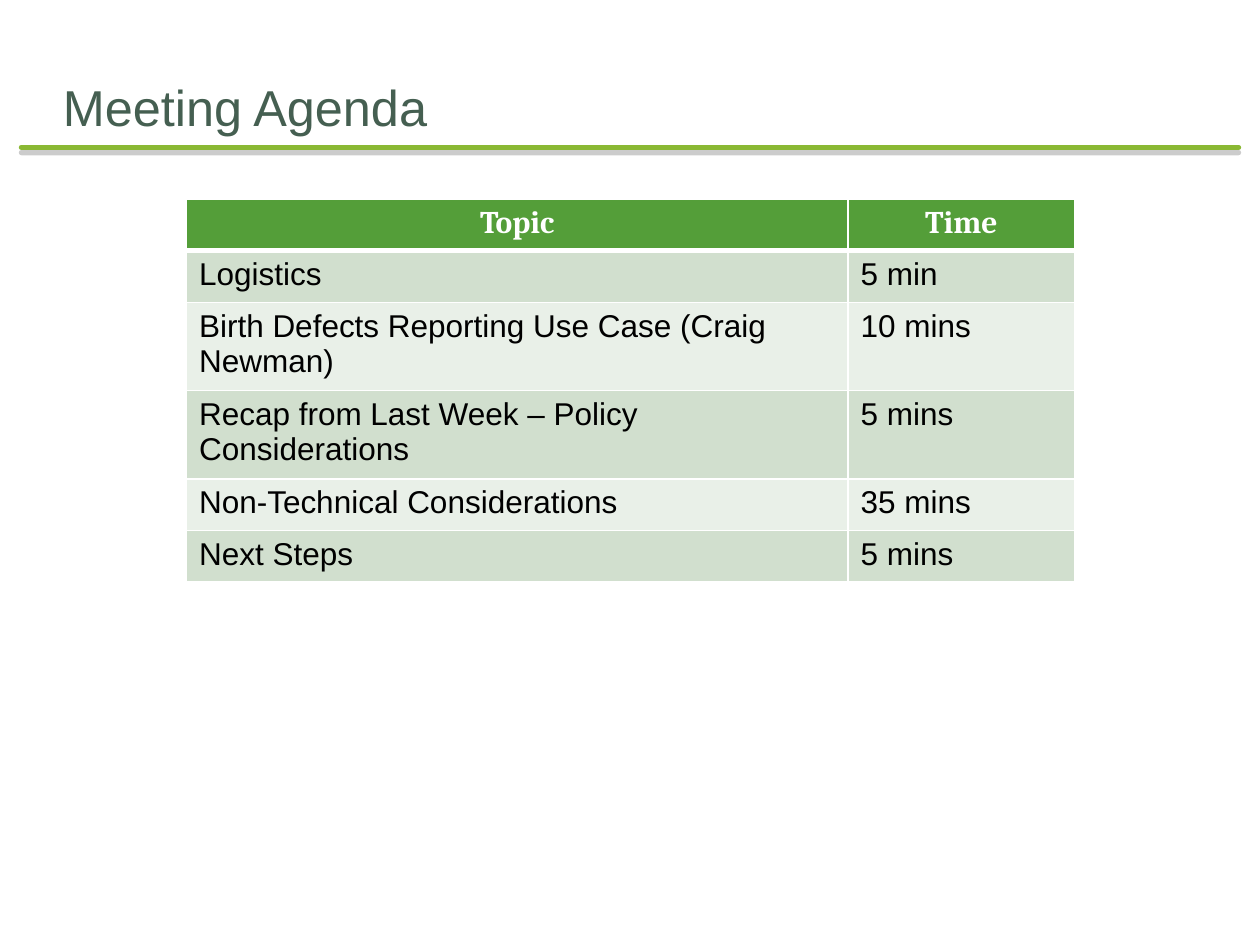
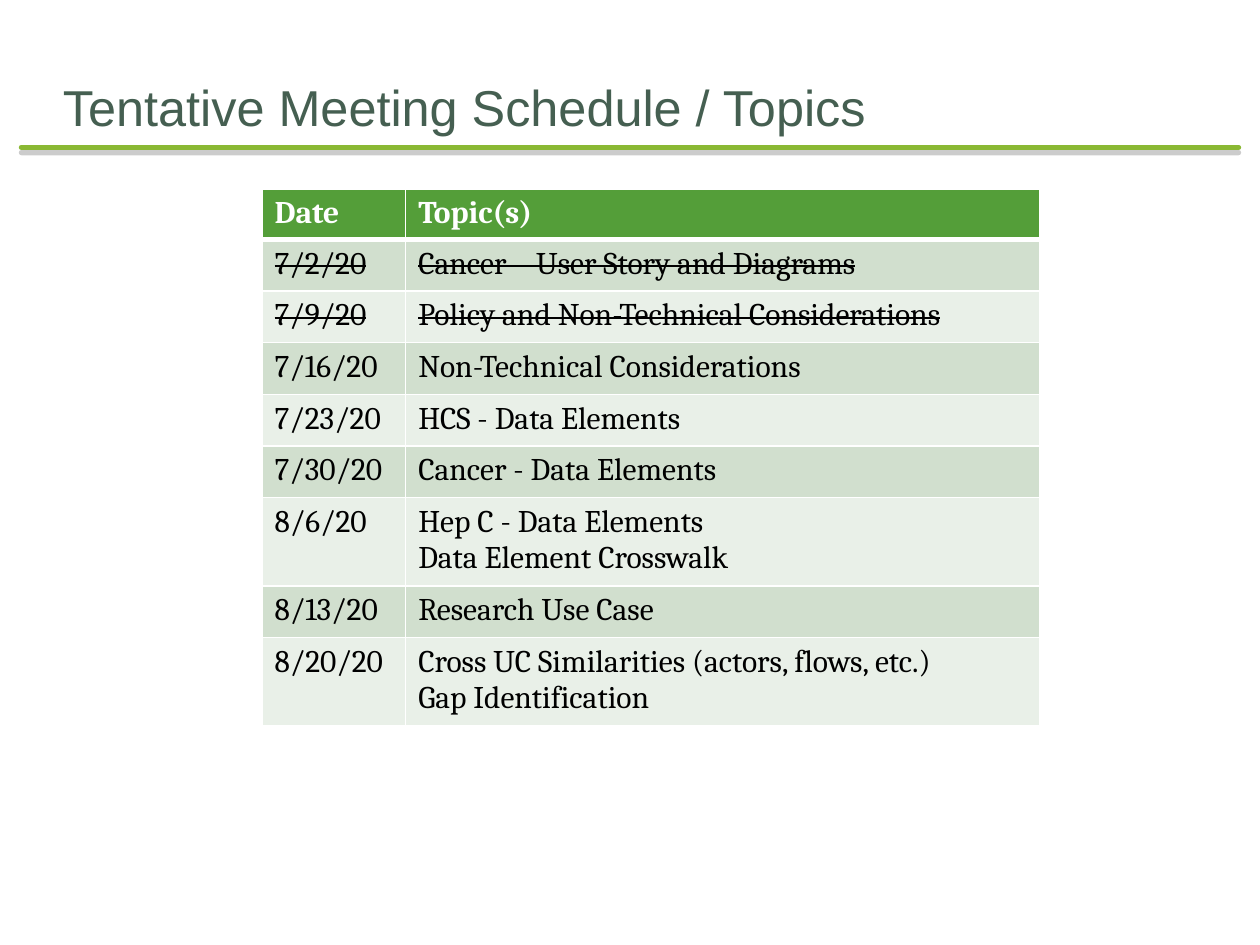
from lxml import etree
from pptx import Presentation
from pptx import util as u
from pptx.dml.color import RGBColor
from pptx.enum import shapes, text
from pptx.oxml import ns

TITLE_COLOR = RGBColor(0x45, 0x5F, 0x51)
RULE_COLOR = RGBColor(0x8A, 0xB8, 0x33)
SHADOW_COLOR = RGBColor(0x80, 0x80, 0x80)
HEADER_FILL = RGBColor(0x54, 0x9E, 0x39)
BAND_FILLS = (RGBColor(0xD1, 0xDF, 0xCE), RGBColor(0xE9, 0xF0, 0xE8))
WHITE = RGBColor(0xFF, 0xFF, 0xFF)
BLACK = RGBColor(0x00, 0x00, 0x00)
TITLE_FONT = "Arial"
HEADER_FONT = "Cambria"
ROW_HEIGHT = u.Inches(0.41)

AGENDA = [
    ("Topic", "Time"),
    ("Logistics", "5 min"),
    ("Birth Defects Reporting Use Case (Craig Newman)", "10 mins"),
    ("Recap from Last Week – Policy Considerations", "5 mins"),
    ("Non-Technical Considerations", "35 mins"),
    ("Next Steps", "5 mins"),
]
SCHEDULE = [
    ("Date", "Topic(s)"),
    ("7/2/20", "Cancer – User Story and Diagrams"),
    ("7/9/20", "Policy and Non-Technical Considerations"),
    ("7/16/20", "Non-Technical Considerations"),
    ("7/23/20", "HCS - Data Elements"),
    ("7/30/20", "Cancer - Data Elements"),
    ("8/6/20", "Hep C - Data Elements\nData Element Crosswalk"),
    ("8/13/20", "Research Use Case"),
    ("8/20/20", "Cross UC Similarities (actors, flows, etc.)\nGap Identification"),
]
COMPLETED_MEETINGS = 2


def style_run(run, font, size, color, bold=False, strike=False):
    run.font.name = font
    run.font.size = u.Pt(size)
    run.font.color.rgb = color
    run.font.bold = bold
    if strike:
        run._r.get_or_add_rPr().set("strike", "sngStrike")


def add_color(parent, color):
    return etree.SubElement(parent, ns.qn("a:srgbClr"), val=str(color))


def add_title_rule(slide):
    """Draw the round-ended line under the title, with its soft grey shadow."""
    rule = slide.shapes.add_connector(
        shapes.MSO_CONNECTOR.STRAIGHT,
        u.Inches(0.17), u.Inches(1.17), u.Inches(9.83), u.Inches(1.17))
    rule.line.color.rgb = RULE_COLOR
    rule.line.width = u.Pt(3)
    properties = rule._element.spPr
    properties.find(ns.qn("a:ln")).set("cap", "rnd")
    effects = etree.SubElement(properties, ns.qn("a:effectLst"))
    shadow = etree.SubElement(
        effects, ns.qn("a:outerShdw"), blurRad="0", dist=str(u.Pt(3)),
        dir="5400000", algn="ctr", rotWithShape="0")
    etree.SubElement(add_color(shadow, SHADOW_COLOR), ns.qn("a:alpha"), val="40000")


def add_title(slide, title):
    box = slide.shapes.add_textbox(
        u.Inches(0.5), u.Inches(0.5), u.Inches(9), u.Inches(0.58))
    frame = box.text_frame
    frame.word_wrap = True
    frame.vertical_anchor = text.MSO_ANCHOR.BOTTOM
    frame.margin_left = frame.margin_right = frame.margin_bottom = 0
    frame.margin_top = u.Inches(0.05)
    frame.text = title
    style_run(frame.paragraphs[0].runs[0], TITLE_FONT, 28.8, TITLE_COLOR)


def add_titled_slide(presentation, title):
    slide = presentation.slides.add_slide(presentation.slide_layouts[6])
    add_title_rule(slide)
    add_title(slide, title)
    return slide


def set_borders(cell, row):
    """Give a cell white borders, thicker between header and body."""
    top = 3 if row == 1 else 1
    bottom = 3 if row == 0 else 1
    for side, width in (("L", 1), ("R", 1), ("T", top), ("B", bottom)):
        border = etree.SubElement(
            cell._tc.get_or_add_tcPr(), ns.qn("a:ln" + side), w=str(u.Pt(width)))
        add_color(etree.SubElement(border, ns.qn("a:solidFill")), WHITE)


def add_banded_table(slide, rows, left, top, column_widths, body_font,
                     header_height=ROW_HEIGHT, header_align=None, struck_rows=0):
    """Add a table with a green header; struck_rows body rows are crossed out."""
    table = slide.shapes.add_table(
        len(rows), len(column_widths), u.Inches(left), u.Inches(top),
        u.Inches(sum(column_widths)),
        header_height + ROW_HEIGHT * (len(rows) - 1)).table
    for column, width in zip(table.columns, column_widths):
        column.width = u.Inches(width)
    for row, values in enumerate(rows):
        is_header = row == 0
        table.rows[row].height = header_height if is_header else ROW_HEIGHT
        for column, value in enumerate(values):
            cell = table.cell(row, column)
            set_borders(cell, row)
            cell.fill.solid()
            cell.fill.fore_color.rgb = (
                HEADER_FILL if is_header else BAND_FILLS[(row - 1) % 2])
            cell.text_frame.text = value
            for paragraph in cell.text_frame.paragraphs:
                if is_header:
                    paragraph.alignment = header_align
                    style_run(paragraph.runs[0], HEADER_FONT, 18, WHITE, bold=True)
                else:
                    style_run(paragraph.runs[0], body_font, 18, BLACK,
                              strike=row <= struck_rows)


def main():
    presentation = Presentation()
    presentation.slide_width = u.Inches(10)
    presentation.slide_height = u.Inches(7.5)

    agenda_slide = add_titled_slide(presentation, "Meeting Agenda")
    add_banded_table(agenda_slide, AGENDA, 1.48, 1.58, (5.25, 1.8), "Arial",
                     header_align=text.PP_ALIGN.CENTER)

    schedule_slide = add_titled_slide(
        presentation, "Tentative Meeting Schedule / Topics")
    add_banded_table(schedule_slide, SCHEDULE, 2.08, 1.5, (1.14, 5.03), "Cambria",
                     header_height=u.Inches(0.38), struck_rows=COMPLETED_MEETINGS)

    presentation.save("out.pptx")


if __name__ == "__main__":
    main()
